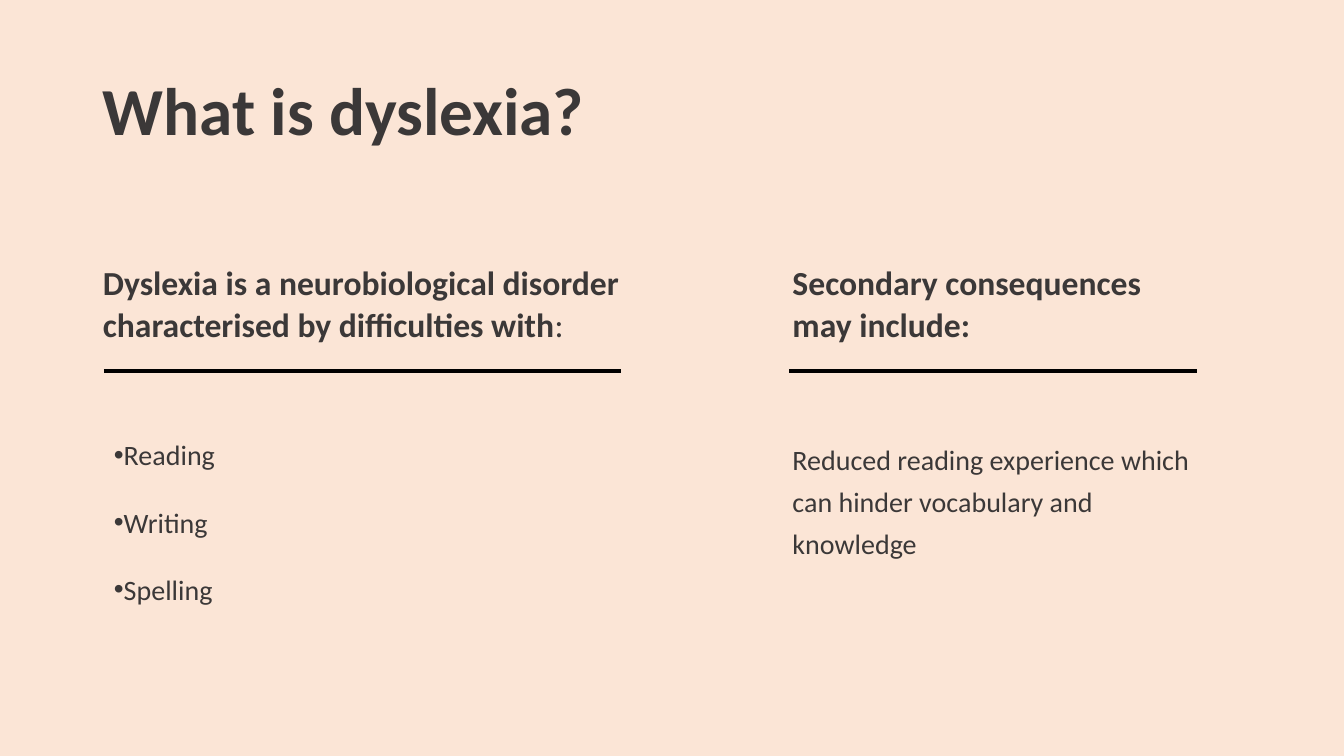
from lxml.etree import SubElement
from pptx import Presentation
from pptx.dml.color import RGBColor
from pptx.enum.shapes import MSO_CONNECTOR
from pptx.enum.text import MSO_ANCHOR, MSO_AUTO_SIZE, PP_ALIGN
from pptx.oxml.ns import qn
from pptx.util import Inches, Pt

COLORS = {"background": "FBE5D6", "text": "3B3838", "rule": "000000"}


def fill_placeholder(placeholder, box, paragraphs, size, bold, line_spacing, space_after=0):
    placeholder.left, placeholder.top, placeholder.width, placeholder.height = map(Inches, box)
    frame = placeholder.text_frame
    frame.text = "\n".join(paragraphs)
    frame.word_wrap = True
    frame.auto_size = MSO_AUTO_SIZE.NONE
    frame.vertical_anchor = MSO_ANCHOR.TOP
    for paragraph in frame.paragraphs:
        paragraph.alignment = PP_ALIGN.LEFT
        paragraph.line_spacing = line_spacing
        paragraph.space_before = Pt(0)
        paragraph.space_after = Pt(space_after)
        for run in paragraph.runs:
            format_run(run, size, bold)


def format_run(run, size, bold):
    run.font.name = "Calibri"
    run.font.size = Pt(size)
    run.font.bold = bold
    run.font.color.rgb = RGBColor.from_string(COLORS["text"])


presentation = Presentation()
presentation.slide_width = Inches(13.33)
presentation.slide_height = Inches(7.5)
slide = presentation.slides.add_slide(presentation.slide_layouts.get_by_name("Comparison"))
slide.background.fill.solid()
slide.background.fill.fore_color.rgb = RGBColor.from_string(COLORS["background"])

title, left_heading, difficulties, right_heading, consequences = slide.placeholders

fill_placeholder(title, (0.92, 0.4, 11.5, 1.45), ["What is dyslexia?"], 48, True, 0.9)
title.text_frame.vertical_anchor = MSO_ANCHOR.MIDDLE

fill_placeholder(
    left_heading, (0.92, 2.53, 5.54, 0.93),
    ["Dyslexia is a neurobiological disorder characterised by difficulties with"],
    24, True, Pt(30), 6,
)
colon = left_heading.text_frame.paragraphs[0].add_run()
colon.text = ":"
format_run(colon, 24, False)

fill_placeholder(
    right_heading, (7.76, 2.53, 4.11, 0.93),
    ["Secondary consequences may include:"], 24, True, Pt(30), 6,
)
fill_placeholder(
    consequences, (7.76, 4.26, 4.44, 1.35),
    ["Reduced reading experience which can hinder vocabulary and knowledge"],
    20, False, Pt(30),
)
fill_placeholder(
    difficulties, (1.03, 3.96, 6.67, 2.03),
    ["Reading", "Writing", "Spelling"], 20, False, 2.0,
)

for placeholder, indent, bullet in ((consequences, 0, None), (difficulties, -0.38, "•")):
    for paragraph in placeholder.text_frame.paragraphs:
        properties = paragraph._p.get_or_add_pPr()
        properties.set("marL", "0")
        properties.set("indent", str(Inches(indent)))
        if bullet:
            SubElement(properties, qn("a:buFont")).set("typeface", "Arial")
            SubElement(properties, qn("a:buChar")).set("char", bullet)
        else:
            SubElement(properties, qn("a:buNone"))

for start, end in ((1.03, 6.16), (7.83, 11.87)):
    rule = slide.shapes.add_connector(
        MSO_CONNECTOR.STRAIGHT, Inches(start), Inches(3.68), Inches(end), Inches(3.68)
    )
    rule.line.color.rgb = RGBColor.from_string(COLORS["rule"])
    rule.line.width = Pt(3)
    SubElement(rule._element.spPr, qn("a:effectLst"))

presentation.save("out.pptx")
